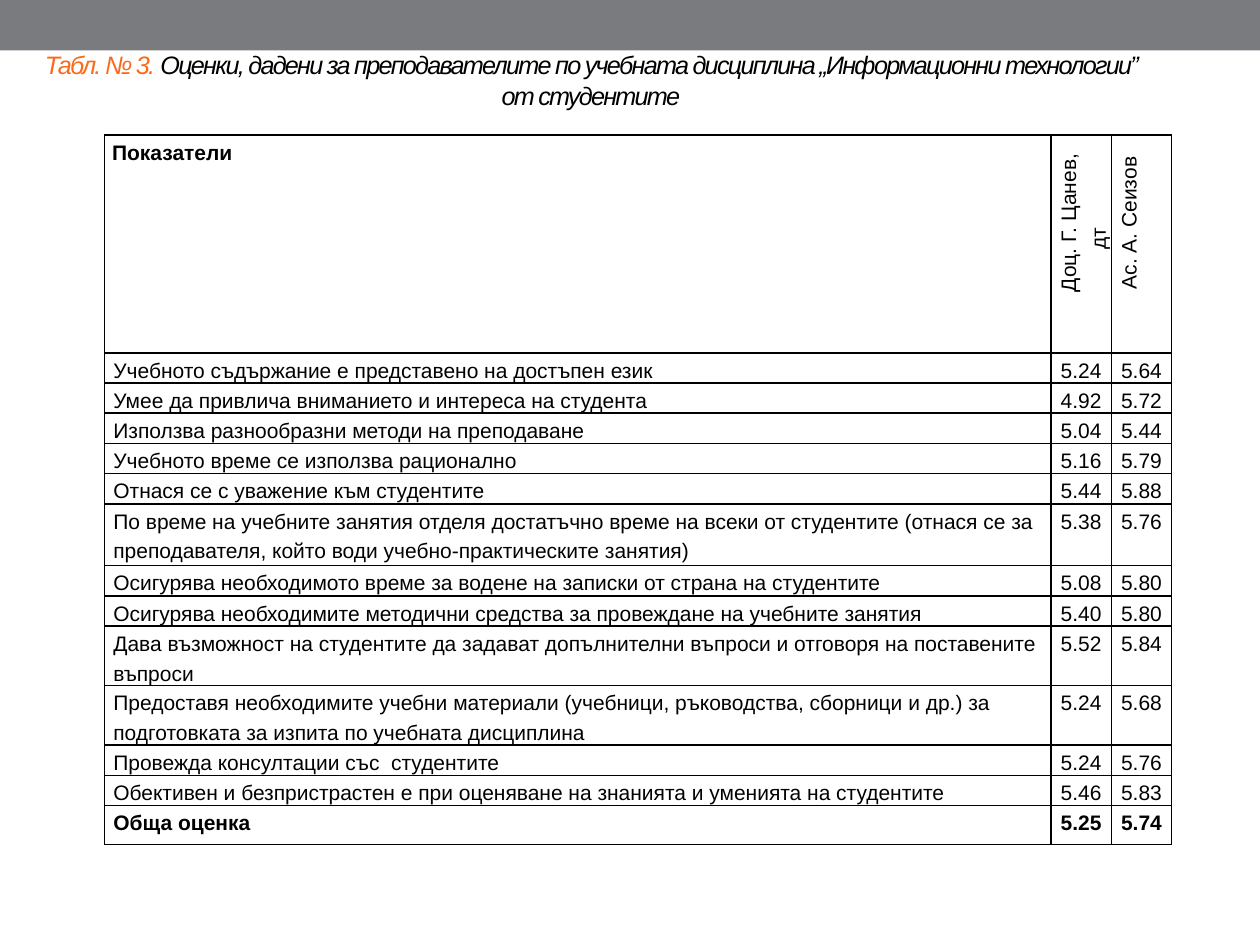
import dataclasses
import typing

import pptx
import pptx.dml.color
import pptx.enum.shapes
import pptx.enum.text
import pptx.oxml
import pptx.oxml.ns
import pptx.util

IN = pptx.util.Inches
PT = pptx.util.Pt
ALIGN = pptx.enum.text.PP_ALIGN


@dataclasses.dataclass(frozen=True)
class Theme:
    font: str = "Arial"
    bar: str = "797B7E"
    accent: str = "F96A1B"
    ink: str = "000000"
    title_size: float = 14.4
    body_size: float = 12
    leading: float = 17
    border: float = 1
    tracking: int = -100


@dataclasses.dataclass(frozen=True)
class Rating:
    label: str
    scores: tuple[str, str]
    height: float = 0.24
    bold: bool = False


@dataclasses.dataclass(frozen=True)
class CellStyle:
    align: typing.Any = ALIGN.LEFT
    inset: float = 0.06
    bold: bool = False
    left: float = 0
    indent: float = 0
    vert: str = ""


T = Theme()
SLIDE_W, SLIDE_H = 10, 7.5
COLUMNS = (7.51, 0.48, 0.48)
HEADER_HEIGHT = 1.73
HEADERS = ("Показатели", "Доц. Г. Цанев, дт", "Ас. А. Сеизов")
RATINGS = (
    Rating("Учебното съдържание е представено на достъпен език", ("5.24", "5.64")),
    Rating("Умее да привлича вниманието и интереса на студента", ("4.92", "5.72")),
    Rating("Използва разнообразни методи на преподаване", ("5.04", "5.44")),
    Rating("Учебното време се използва рационално", ("5.16", "5.79")),
    Rating("Отнася се с уважение към студентите", ("5.44", "5.88")),
    Rating("По време на учебните занятия отделя достатъчно време на всеки от студентите "
           "(отнася се за преподавателя, който води учебно-практическите занятия)",
           ("5.38", "5.76"), 0.49),
    Rating("Осигурява необходимото време за водене на записки от страна на студентите",
           ("5.08", "5.80")),
    Rating("Осигурява необходимите методични средства за провеждане на учебните занятия",
           ("5.40", "5.80")),
    Rating("Дава възможност на студентите да задават допълнителни въпроси и отговоря "
           "на поставените въпроси", ("5.52", "5.84"), 0.47),
    Rating("Предоставя необходимите учебни материали (учебници, ръководства, сборници и др.) "
           "за подготовката за изпита по учебната дисциплина", ("5.24", "5.68"), 0.47),
    Rating("Провежда консултации със  студентите", ("5.24", "5.76")),
    Rating("Обективен и безпристрастен е при оценяване на знанията и уменията на студентите",
           ("5.46", "5.83")),
    Rating("Обща оценка", ("5.25", "5.74"), 0.31, True),
)


def rgb(value: str) -> pptx.dml.color.RGBColor:
    return pptx.dml.color.RGBColor.from_string(value)


def apply(obj: typing.Any, values: dict[str, typing.Any]) -> None:
    for name, value in values.items():
        setattr(obj, name, value)


def add_run(p: typing.Any, text: str, color: str, **fmt: typing.Any) -> typing.Any:
    r = p.add_run()
    r.text = text
    apply(r.font, {"name": T.font, **fmt})
    r.font.color.rgb = rgb(color)
    return r


def add_bar(s: typing.Any) -> None:
    sp = s.shapes.add_shape(pptx.enum.shapes.MSO_SHAPE.RECTANGLE, 0, 0, IN(SLIDE_W), IN(0.4))
    sp.shadow.inherit = False
    sp.fill.solid()
    sp.fill.fore_color.rgb = rgb(T.bar)
    sp.line.fill.background()


def add_title(s: typing.Any) -> None:
    tf = s.shapes.add_textbox(IN(0.2), IN(0.36), IN(8.98), IN(0.55)).text_frame
    apply(tf, {"word_wrap": True, "vertical_anchor": pptx.enum.text.MSO_ANCHOR.MIDDLE})
    p = tf.paragraphs[0]
    p.alignment = ALIGN.CENTER
    for text, color in (
        ("Табл. № 3. ", T.accent),
        ("Оценки, дадени за преподавателите по учебната дисциплина "
         "„Информационни технологии” от студентите", T.ink),
    ):
        r = add_run(p, text, color, size=PT(T.title_size), italic=True)
        r.font._element.set("spc", str(T.tracking))


def set_borders(tc_pr: typing.Any) -> None:
    ns = pptx.oxml.ns.nsdecls("a")
    for i, side in enumerate(("lnL", "lnR", "lnT", "lnB")):
        tc_pr.insert(i, pptx.oxml.parse_xml(
            f'<a:{side} {ns} w="{PT(T.border)}"><a:solidFill><a:srgbClr val="{T.ink}"/>'
            f'</a:solidFill></a:{side}>'))


def fill_cell(cell: typing.Any, text: str, style: CellStyle) -> None:
    apply(cell, {"margin_left": IN(style.inset), "margin_right": IN(style.inset),
                 "margin_top": 0, "margin_bottom": 0})
    cell.fill.background()
    tc_pr = cell._tc.get_or_add_tcPr()
    set_borders(tc_pr)
    if style.vert:
        tc_pr.set("vert", style.vert)
    p = cell.text_frame.paragraphs[0]
    apply(p, {"alignment": style.align, "line_spacing": PT(T.leading)})
    p_pr = p._p.get_or_add_pPr()
    p_pr.set("marL", str(IN(style.left)))
    p_pr.set("indent", str(IN(style.indent)))
    add_run(p, text, T.ink, size=PT(T.body_size), bold=style.bold)


def add_ratings(s: typing.Any) -> None:
    heights = (HEADER_HEIGHT, *(rating.height for rating in RATINGS))
    table = s.shapes.add_table(len(heights), len(COLUMNS), IN(0.83), IN(1.07),
                               IN(sum(COLUMNS)), IN(sum(heights))).table
    apply(table, {"first_row": False, "horz_banding": False})
    for column, width in zip(table.columns, COLUMNS):
        column.width = IN(width)
    for row, height in zip(table.rows, heights):
        row.height = IN(height)

    # Header row: lecturers' names read upwards
    upright = CellStyle(ALIGN.CENTER, left=0.08, indent=0.25, vert="vert270")
    styles = (CellStyle(ALIGN.JUSTIFY, bold=True), upright, upright)
    for col, (text, style) in enumerate(zip(HEADERS, styles)):
        fill_cell(table.cell(0, col), text, style)

    # One row per rating
    for row, rating in enumerate(RATINGS, 1):
        fill_cell(table.cell(row, 0), rating.label, CellStyle(inset=0.07, bold=rating.bold))
        for col, score in enumerate(rating.scores, 1):
            indent = -0.01 if col == 2 else 0
            fill_cell(table.cell(row, col), score,
                      CellStyle(ALIGN.CENTER, bold=rating.bold, indent=indent))


def main() -> None:
    prs = pptx.Presentation()
    apply(prs, {"slide_width": IN(SLIDE_W), "slide_height": IN(SLIDE_H)})
    s = prs.slides.add_slide(prs.slide_layouts[6])
    add_bar(s)
    add_title(s)
    add_ratings(s)
    prs.save("out.pptx")


if __name__ == "__main__":
    main()
